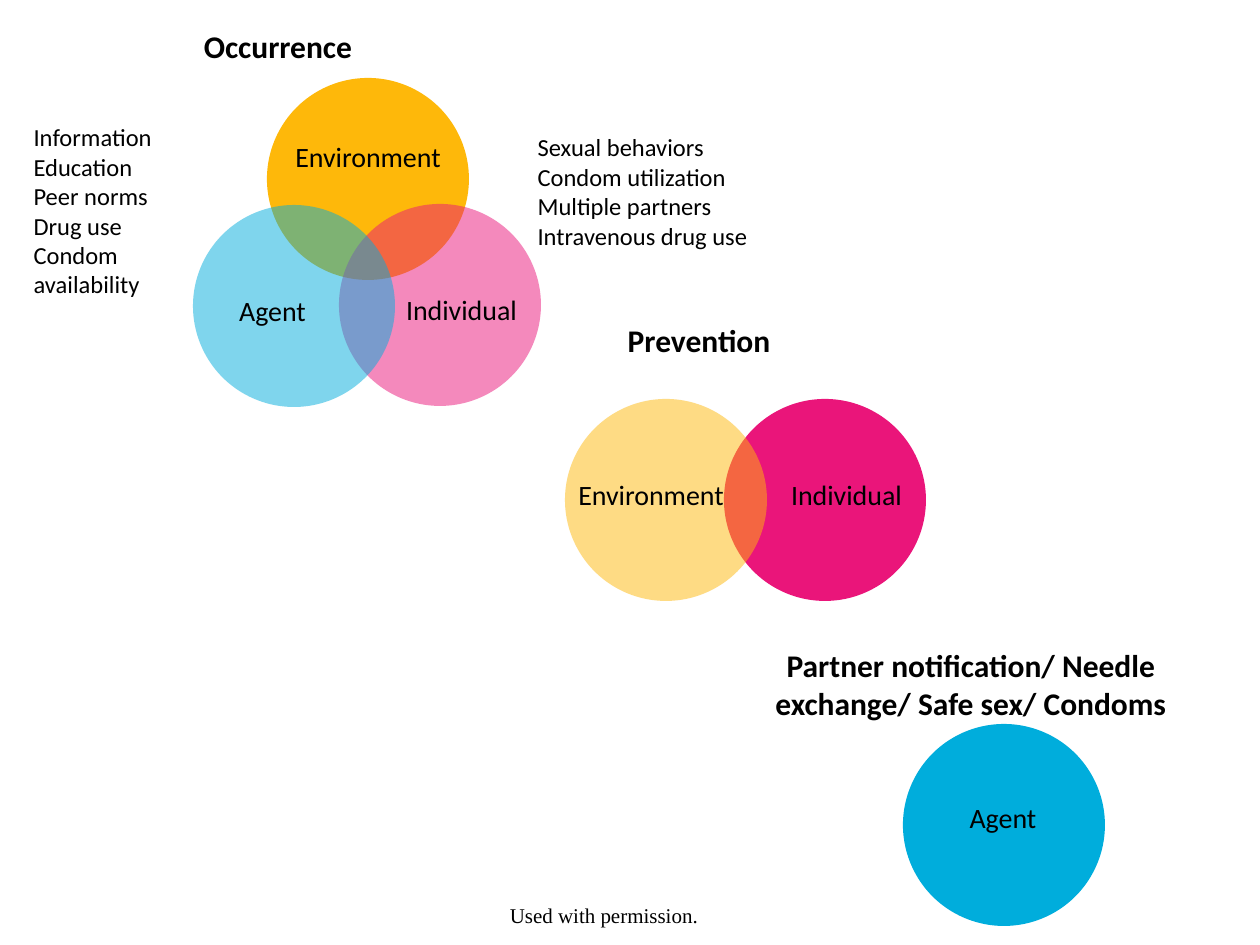
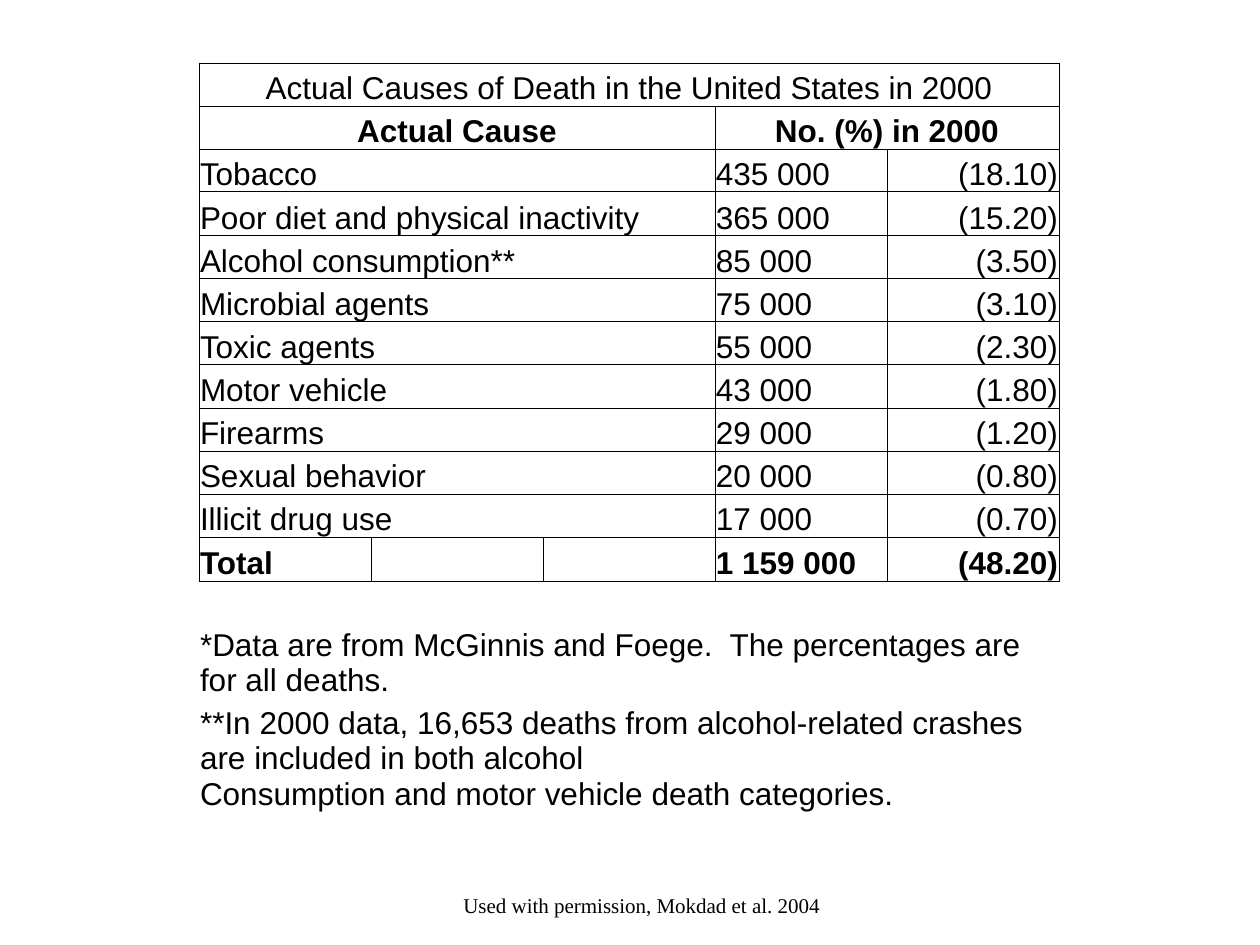
from lxml.etree import SubElement
from pptx import Presentation
from pptx.dml.color import RGBColor
from pptx.enum.shapes import MSO_SHAPE as Preset
from pptx.enum.text import MSO_ANCHOR as Anchor, MSO_AUTO_SIZE as AutoSize, PP_ALIGN as Align
from pptx.oxml import parse_xml
from pptx.oxml.ns import nsdecls, qn
from pptx.util import Pt

PX = 914400 / 126
BLACK = RGBColor(0x00, 0x00, 0x00)
AMBER = RGBColor(0xFE, 0xB8, 0x0A)
PINK = RGBColor(0xEA, 0x15, 0x7A)
CYAN = RGBColor(0x00, 0xAD, 0xDC)

HEADING = {"name": "Calibri", "size": Pt(18), "bold": True}
FACTOR = {"name": "Calibri", "size": Pt(14), "bold": False}
LABEL = {"name": "Calibri", "size": Pt(16), "bold": False}
CREDIT = {"name": "Times New Roman", "size": Pt(12), "bold": False}
CELL = {"name": "Arial", "size": Pt(18), "bold": False}
CELL_BOLD = {**CELL, "bold": True}

GROWING = {"word_wrap": True, "auto_size": AutoSize.SHAPE_TO_FIT_TEXT, "vertical_anchor": Anchor.TOP}
CENTRED = {"word_wrap": True, "auto_size": AutoSize.NONE, "vertical_anchor": Anchor.MIDDLE,
           "margin_left": 0, "margin_right": 0, "margin_top": 0, "margin_bottom": 0}


def px(*lengths):
    return [round(length * PX) for length in lengths]


def write(frame, lines, font_format, frame_format, paragraph_format):
    for key, value in frame_format.items():
        setattr(frame, key, value)
    for index, line in enumerate(lines):
        paragraph = frame.add_paragraph() if index else frame.paragraphs[0]
        for key, value in paragraph_format.items():
            setattr(paragraph, key, value)
        run = paragraph.add_run()
        run.text = line
        run.font.color.rgb = BLACK
        for key, value in font_format.items():
            setattr(run.font, key, value)


deck = Presentation()
deck.slide_width, deck.slide_height = px(1260, 945)

triad = deck.slides.add_slide(deck.slide_layouts[3])
occurrence, environment_factors, individual_factors = triad.placeholders
for part, place, lines, font_format, align in [
    (occurrence, (136, 21, 284, 53), ["Occurrence"], HEADING, Align.CENTER),
    (environment_factors, (21, 116, 179, 190),
     ["Information", "Education", "Peer norms", "Drug use", "Condom availability"],
     FACTOR, Align.LEFT),
    (individual_factors, (525, 126, 315, 131),
     ["Sexual behaviors", "Condom utilization", "Multiple partners", "Intravenous drug use"],
     FACTOR, Align.LEFT),
]:
    part.left, part.top, part.width, part.height = px(*place)
    write(part.text_frame, lines, font_format, GROWING,
          {"alignment": align, "space_before": Pt(0)})
    for paragraph in part.text_frame.paragraphs:
        properties = paragraph._p.get_or_add_pPr()
        properties.set("marL", "0")
        properties.set("indent", "0")
        SubElement(properties, qn("a:buNone"))

for name, colour, opacity, corner, label_place in [
    ("Environment", AMBER, 100, (267, 78), (294, 113, 148, 91)),
    ("Individual", PINK, 50, (339, 204), (401, 256, 121, 111)),
    ("Agent", CYAN, 50, (193, 205), (212, 257, 121, 111)),
    ("Agent", CYAN, 100, (903, 724), (945, 777, 116, 84)),
    ("Individual", PINK, 100, (724, 399), (786, 441, 121, 111)),
    ("Environment", AMBER, 50, (565, 399), (577, 451, 148, 91)),
]:
    circle = triad.shapes.add_shape(Preset.OVAL, *px(*corner, 202, 202))
    circle.shadow.inherit = False
    circle.line.fill.background()
    circle.fill.solid()
    circle.fill.fore_color.rgb = colour
    if opacity < 100:
        tint = circle._element.spPr.find(qn("a:solidFill"))[0]
        SubElement(tint, qn("a:alpha"), val=str(opacity * 1000))
    label = triad.shapes.add_textbox(*px(*label_place))
    write(label.text_frame, [name], LABEL, CENTRED,
          {"alignment": Align.CENTER, "line_spacing": 0.9})

causes = deck.slides.add_slide(deck.slide_layouts[6])
for slide, place, text, font_format, align in [
    (triad, (557, 315, 284, 53), "Prevention", HEADING, Align.CENTER),
    (triad, (724, 640, 494, 89), "Partner notification/ Needle exchange/ Safe sex/ Condoms",
     HEADING, Align.CENTER),
    (triad, (231, 896, 746, 38), "Used with permission.", CREDIT, Align.CENTER),
    (causes, (451, 886, 567, 38), "Used with permission, Mokdad et al. 2004", CREDIT, Align.LEFT),
]:
    caption = slide.shapes.add_textbox(*px(*place))
    write(caption.text_frame, [text], font_format, GROWING, {"alignment": align})

DEATHS = [
    ("Tobacco", "435 000", "(18.10)"),
    ("Poor diet and physical inactivity", "365 000", "(15.20)"),
    ("Alcohol consumption**", "85 000", "(3.50)"),
    ("Microbial agents", "75 000", "(3.10)"),
    ("Toxic agents", "55 000", "(2.30)"),
    ("Motor vehicle", "43 000", "(1.80)"),
    ("Firearms", "29 000", "(1.20)"),
    ("Sexual behavior", "20 000", "(0.80)"),
    ("Illicit drug use", "17 000", "(0.70)"),
    ("Total", "1 159 000", "(48.20)"),
]
TOTAL_ROW = len(DEATHS) + 1
GAP_ROW = TOTAL_ROW + 1
ROWS, COLUMNS = GAP_ROW + 3, 5

table = causes.shapes.add_table(ROWS, COLUMNS, *px(199, 63, 860, 755)).table
table.first_row = table.horz_banding = False
for column in table.columns:
    column.width = px(172)[0]
for number, row in enumerate(table.rows):
    row.height = px(87 if number == ROWS - 1 else 43 + (number % 4 == 3))[0]

cell_margins = dict(zip(("margin_left", "margin_right", "margin_top", "margin_bottom"), px(1, 1, 1, 0)))
for number in range(ROWS):
    for position in range(COLUMNS):
        cell = table.cell(number, position)
        cell.fill.background()
        for key, value in cell_margins.items():
            setattr(cell, key, value)
        properties = cell._tc.get_or_add_tcPr()
        for order, edge in enumerate(("lnL", "lnR", "lnT", "lnB")):
            ruled = number <= TOTAL_ROW or (number == GAP_ROW and edge == "lnT")
            paint = f'<a:solidFill><a:srgbClr val="{BLACK}"/></a:solidFill>' if ruled else "<a:noFill/>"
            properties.insert(order, parse_xml(
                f'<a:{edge} {nsdecls("a")} w="{Pt(0.5)}">{paint}</a:{edge}>'))

entries = [
    (0, 0, 5, ["Actual Causes of Death in the United States in 2000"], CELL, Align.CENTER),
    (1, 0, 3, ["Actual Cause"], CELL_BOLD, Align.CENTER),
    (1, 3, 2, ["No. (%) in 2000"], CELL_BOLD, Align.CENTER),
    (GAP_ROW + 1, 0, 5,
     ["*Data are from McGinnis and Foege.  The percentages are for all deaths."], CELL, Align.LEFT),
    (GAP_ROW + 2, 0, 5,
     ["**In 2000 data, 16,653 deaths from alcohol-related crashes are included in both alcohol",
      "Consumption and motor vehicle death categories."], CELL, Align.LEFT),
]
for number, (cause, count, share) in enumerate(DEATHS, 2):
    is_total = number == TOTAL_ROW
    font_format = CELL_BOLD if is_total else CELL
    entries += [
        (number, 0, 1 if is_total else 3, [cause], font_format, Align.LEFT),
        (number, 3, 1, [count], font_format, Align.LEFT),
        (number, 4, 1, [share], font_format, Align.RIGHT),
    ]

table.cell(GAP_ROW, 0).merge(table.cell(GAP_ROW, COLUMNS - 1))
for number, position, span, lines, font_format, align in entries:
    cell = table.cell(number, position)
    if span > 1:
        cell.merge(table.cell(number, position + span - 1))
    cell.vertical_anchor = Anchor.MIDDLE if number > GAP_ROW else Anchor.BOTTOM
    write(cell.text_frame, lines, font_format, {}, {"alignment": align})

deck.save("out.pptx")
